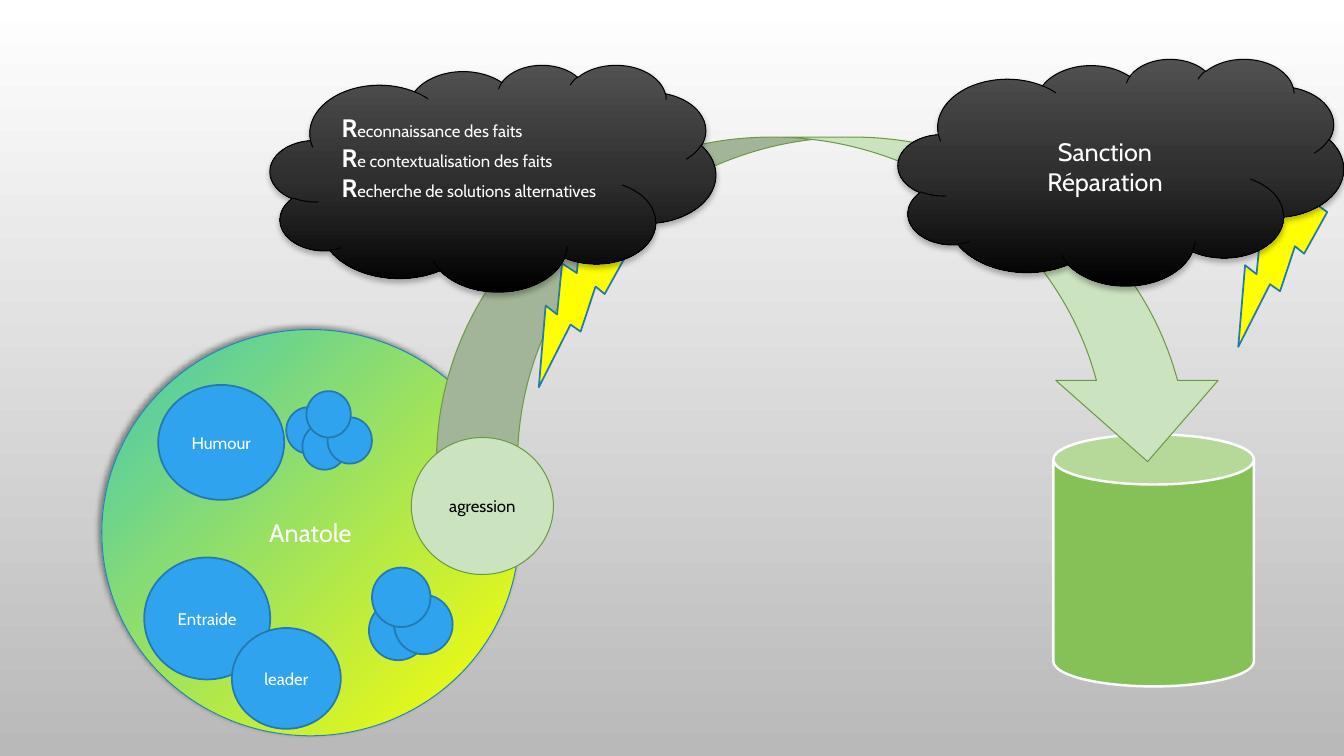
from lxml import etree
from pptx import Presentation
from pptx.dml.color import RGBColor
from pptx.enum import shapes, text
from pptx.oxml import ns
from pptx.util import Pt

FONT = "Cabin"
KIND = shapes.MSO_SHAPE
WHITE, BLACK = "FFFFFF", "000000"

# Gradients: (stops, clockwise angle)
BACKDROP = ([(0, WHITE), (100, "B9B9B9")], 90)
PERSONALITY = ([(0, "FFFF00"), (96, "4BCAAD"), (100, "FFC000")], 225)
STORM = ([(0, "515151"), (50, "2F2F2F"), (100, BLACK)], 90)

# Styles: (fill, line colour, line width)
PERSON = (PERSONALITY, "2683BF", 0.75)
TRAIT = ("2FA3EE", "2379B0", 1.25)
ACT = ("CCE3BF", "6B9B46", 0.75)
BOLT = ("FFFF00", "2379B0", 1.25)
CAN = ("86C157", WHITE, 1.75)
CLOUD = (STORM, BLACK, 0.75)

# Shadows: (opacity %, blur, distance, direction)
PERSON_SHADOW = (40, 4, 3, 225)
CLOUD_SHADOW = (28, 4, 2, 90)

TRAITS = [
    ("Entraide", (103, 398.2, 90, 87.1)),
    ("Humour", (113, 275, 90, 82.1)),
    ("leader", (165.6, 448.6, 77.8, 72)),
]
CLUSTERS = [  # circle size, top left corners
    ((31.7, 33.1), [(204.5, 290.9), (216, 302.4), (234, 298.1), (218.9, 279.4)]),
    ((41.8, 42.5), [(263.5, 429.1), (281.5, 424.8), (265.7, 405.4)]),
]
BOLT_SIZE, BOLT_TURN = (92.2, 100.8), 62.5
CLOUD_SIZE = (318.2, 162)
RESPONSES = [  # bolt corner, cloud corner
    ((362.2, 162), (193, 46.1)),
    ((861.8, 133.2), (641.5, 41.8)),
]
THREE_RS = [
    "Reconnaissance des faits",
    "Re contextualisation des faits",
    "Recherche de solutions alternatives",
]
OUTCOMES = ["Sanction", "Réparation"]
EMPTY_LINE = 22  # room kept free below the three Rs


def colour(code):
    return RGBColor.from_string(code)


def paint_gradient(owner, fill, gradient):
    """Fill with any number of stops; owner holds the first gradFill."""
    stops, angle = gradient
    fill.gradient()
    fill.gradient_angle = 360 - angle
    stop_list = owner._element.find(".//" + ns.qn("a:gsLst"))
    for old in list(stop_list):
        stop_list.remove(old)
    for place, code in stops:
        stop = etree.SubElement(stop_list, ns.qn("a:gs"), pos=str(place * 1000))
        etree.SubElement(stop, ns.qn("a:srgbClr"), val=code)


def add_shadow(shape, opacity, blur, distance, direction):
    effects = shape._element.spPr.find(ns.qn("a:effectLst"))
    shadow = etree.SubElement(
        effects, ns.qn("a:outerShdw"), blurRad=str(Pt(blur)), dist=str(Pt(distance)),
        dir=str(direction * 60000), algn="ctr", rotWithShape="0")
    tint = etree.SubElement(shadow, ns.qn("a:srgbClr"), val=BLACK)
    etree.SubElement(tint, ns.qn("a:alpha"), val=str(opacity * 1000))


def add_part(page, kind, bounds, style, shadow=None):
    fill, line, width = style
    shape = page.shapes.add_shape(kind, *map(Pt, bounds))
    shape.shadow.inherit = False
    if isinstance(fill, str):
        shape.fill.solid()
        shape.fill.fore_color.rgb = colour(fill)
    else:
        paint_gradient(shape, shape.fill, fill)
    shape.line.color.rgb = colour(line)
    shape.line.width = Pt(width)
    if shadow:
        add_shadow(shape, *shadow)
    return shape


def write(shape, lines, size, code=WHITE, big_initial=None):
    """Centred lines, or left-aligned ones with a bold larger first letter."""
    frame = shape.text_frame
    frame.vertical_anchor = text.MSO_ANCHOR.MIDDLE
    for number, line in enumerate(lines):
        para = frame.paragraphs[0] if number == 0 else frame.add_paragraph()
        para.alignment = text.PP_ALIGN.LEFT if big_initial else text.PP_ALIGN.CENTER
        pieces = [(line[0], big_initial), (line[1:], size)] if big_initial else [(line, size)]
        for piece, points in pieces:
            span = para.add_run()
            span.text = piece
            span.font.name = FONT
            span.font.size = Pt(points)
            span.font.bold = points == big_initial
            span.font.color.rgb = colour(code)


def main():
    deck = Presentation()
    deck.slide_width, deck.slide_height = Pt(960), Pt(540)
    page = deck.slides.add_slide(deck.slide_layouts[6])
    paint_gradient(page, page.background.fill, BACKDROP)

    person = add_part(page, KIND.OVAL, (72.7, 235.4, 298.1, 290.2), PERSON, PERSON_SHADOW)
    write(person, ["Anatole"], 18)
    for label, bounds in TRAITS:
        write(add_part(page, KIND.OVAL, bounds, TRAIT), [label], 12)
    for size, corners in CLUSTERS:
        for corner in corners:
            add_part(page, KIND.OVAL, corner + size, TRAIT)

    add_part(page, KIND.CAN, (752.4, 310.3, 143.3, 180), CAN)
    add_part(page, KIND.CURVED_DOWN_ARROW, (311.8, 97.9, 565.9, 231.8), ACT)
    act = add_part(page, KIND.OVAL, (293.8, 312.5, 101.5, 97.9), ACT)
    write(act, ["agression"], 12, BLACK)

    clouds = []
    for bolt_corner, cloud_corner in RESPONSES:
        bolt = add_part(page, KIND.LIGHTNING_BOLT, bolt_corner + BOLT_SIZE, BOLT)
        bolt.rotation = BOLT_TURN
        clouds.append(add_part(page, KIND.CLOUD, cloud_corner + CLOUD_SIZE, CLOUD, CLOUD_SHADOW))
    recognition, sanction = clouds
    write(recognition, THREE_RS, 12, big_initial=18)
    recognition.text_frame.margin_bottom += Pt(EMPTY_LINE)
    write(sanction, OUTCOMES, 18)

    deck.save("out.pptx")


if __name__ == "__main__":
    main()
